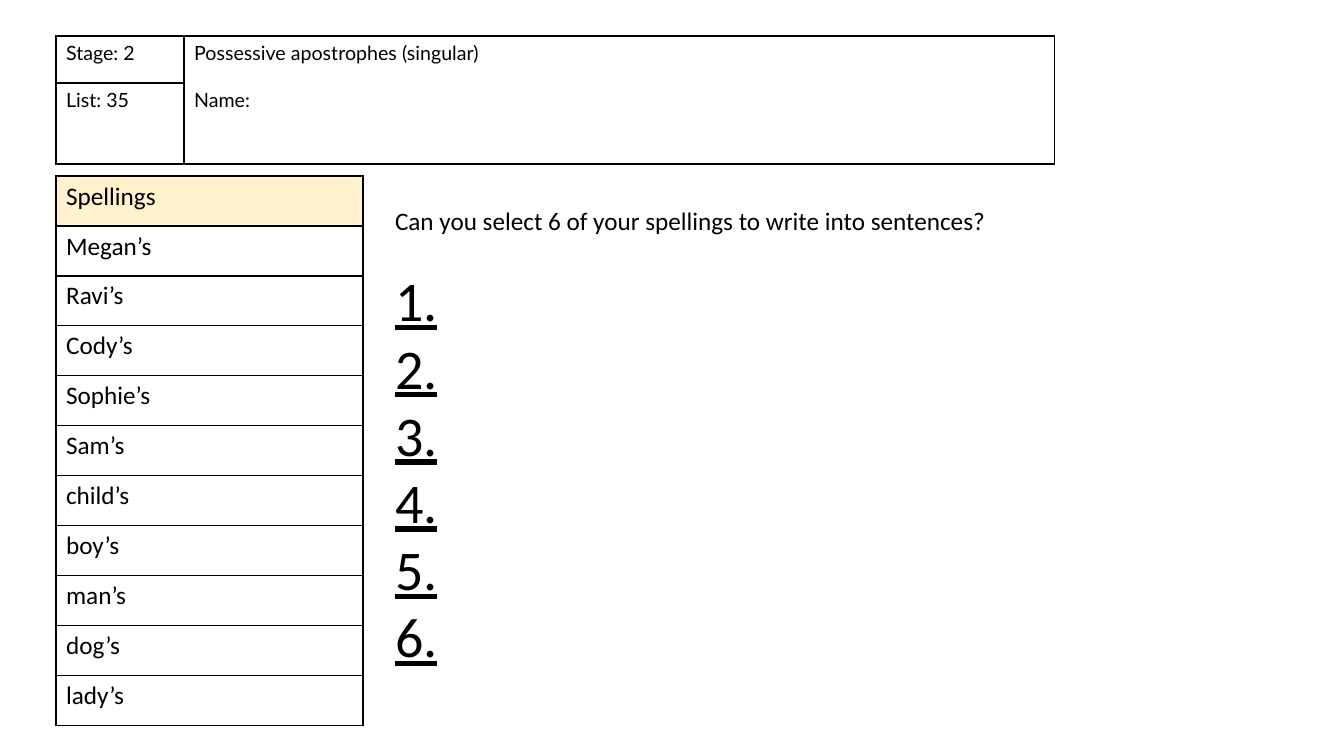
import pptx
import pptx.dml.color
import pptx.enum.text
import pptx.oxml
import pptx.oxml.ns
import pptx.util

STAGE = "Stage: 2"
LIST_NUMBER = "List: 35"
TOPIC = ["Possessive apostrophes (singular)", "Name:"]
SPELLINGS = ["Spellings", "Megan’s", "Ravi’s", "Cody’s", "Sophie’s", "Sam’s",
             "child’s", "boy’s", "man’s", "dog’s", "lady’s"]
QUESTION = "Can you select 6 of your spellings to write into sentences?"
SENTENCE_COUNT = 6

COLORS = {"ink": "000000", "paper": "FFFFFF", "heading": "FFF2CC"}
PX = 9071
LEFT = 56
HEADER_TOP, HEADER_COLS, HEADER_ROWS = 36, [128, 870], [47, 81]
SPELLINGS_TOP, SPELLINGS_WIDTH = 176, 307
SPELLING_ROWS = [50] * len(SPELLINGS)
TASK_BOX = (385, 200, 945, 509)


def px(length):
    return pptx.util.Emu(length * PX)


def rgb(name):
    return pptx.dml.color.RGBColor.from_string(COLORS[name])


def write(frame, lines, font, size):
    frame.text = "\n".join(lines)
    for paragraph in frame.paragraphs:
        paragraph.font.name = font
        paragraph.font.size = pptx.util.Pt(size)
        paragraph.font.color.rgb = rgb("ink")


def add_grid(slide, top, widths, heights):
    grid = slide.shapes.add_table(len(heights), len(widths), px(LEFT), px(top),
                                  px(sum(widths)), px(sum(heights))).table
    grid.first_row = grid.horz_banding = False
    for column, width in zip(grid.columns, widths):
        column.width = px(width)
    for row, height in zip(grid.rows, heights):
        row.height = px(height)
    for cell in grid.iter_cells():
        properties = cell._tc.get_or_add_tcPr()
        for side in ("lnL", "lnR", "lnT", "lnB"):
            properties.append(pptx.oxml.parse_xml(
                f'<a:{side} {pptx.oxml.ns.nsdecls("a")} w="12700"><a:solidFill>'
                f'<a:srgbClr val="{COLORS["ink"]}"/></a:solidFill></a:{side}>'))
        cell.fill.solid()
        cell.fill.fore_color.rgb = rgb("paper")
    return grid


def main():
    deck = pptx.Presentation()
    deck.slide_width = pptx.util.Inches(13.33)
    deck.slide_height = pptx.util.Inches(7.5)
    slide = deck.slides.add_slide(deck.slide_layouts[6])

    spellings = add_grid(slide, SPELLINGS_TOP, [SPELLINGS_WIDTH], SPELLING_ROWS)
    for row, word in enumerate(SPELLINGS):
        write(spellings.cell(row, 0).text_frame, [word], "Calibri", 18)
    spellings.cell(0, 0).fill.fore_color.rgb = rgb("heading")

    header = add_grid(slide, HEADER_TOP, HEADER_COLS, HEADER_ROWS)
    topic = header.cell(0, 1)
    topic.merge(header.cell(1, 1))
    for cell, lines in ((header.cell(0, 0), [STAGE]),
                        (header.cell(1, 0), [LIST_NUMBER]), (topic, TOPIC)):
        write(cell.text_frame, lines, "Lato", 14)
    topic.text_frame.paragraphs[1].space_before = pptx.util.Pt(17)

    task = slide.shapes.add_textbox(*map(px, TASK_BOX)).text_frame
    task.word_wrap = True
    task.vertical_anchor = pptx.enum.text.MSO_ANCHOR.TOP
    numbers = [f"{number}." for number in range(1, SENTENCE_COUNT + 1)]
    write(task, [QUESTION] + numbers, "Calibri", 18)
    for paragraph in task.paragraphs[1:]:
        paragraph.font.size = pptx.util.Pt(40)
        paragraph.font.underline = True
    task.paragraphs[1].space_before = pptx.util.Pt(22)

    deck.save("out.pptx")


if __name__ == "__main__":
    main()
